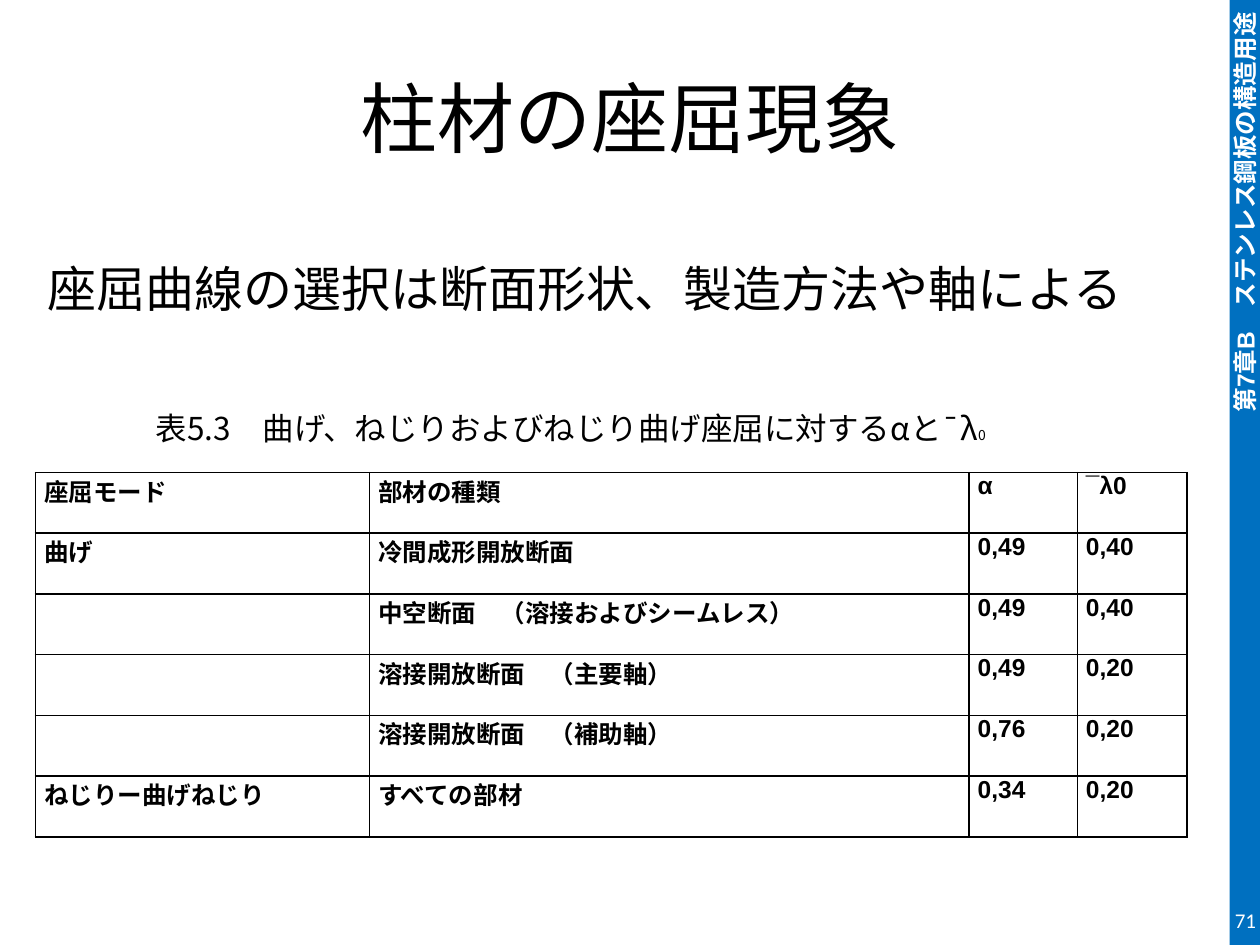
from lxml import etree
from pptx import Presentation
from pptx import util as u
from pptx.dml.color import RGBColor
from pptx.enum import shapes, text
from pptx.oxml import ns

COLOURS = {"bar": "0070C0", "ink": "000000", "paper": "FFFFFF"}
CJK = "Noto Sans CJK JP"
MARGINS = ("margin_left", "margin_top", "margin_right", "margin_bottom")

COLUMN_WIDTHS = (190.8, 342.7, 61.9, 62.6)
ROW_HEIGHT = 34.7
ROWS = (
    ("座屈モード", "部材の種類", "α", "¯λ0"),
    ("曲げ", "冷間成形開放断面", "0,49", "0,40"),
    ("", "中空断面　（溶接およびシームレス）", "0,49", "0,40"),
    ("", "溶接開放断面　（主要軸）", "0,49", "0,20"),
    ("", "溶接開放断面　（補助軸）", "0,76", "0,20"),
    ("ねじりー曲げねじり", "すべての部材", "0,34", "0,20"),
)


def set_values(target, values):
    for name, value in values.items():
        setattr(target, name, value)


def add_run(paragraph, words, size, name=CJK, colour="ink", bold=False):
    run = paragraph.add_run()
    run.text = words
    set_values(run.font, {"size": u.Pt(size), "name": name, "bold": bold})
    run.font.color.rgb = RGBColor.from_string(COLOURS[colour])
    latin = run.font._element.find(ns.qn("a:latin"))
    latin.addnext(etree.Element(ns.qn("a:ea"), typeface=CJK))


def write_frame(shape, runs, align, anchor, margins=(7.2, 3.6, 7.2, 3.6)):
    frame = shape.text_frame
    set_values(frame, {"word_wrap": True, "vertical_anchor": anchor})
    set_values(frame, {name: u.Pt(size) for name, size in zip(MARGINS, margins)})
    paragraph = frame.paragraphs[0]
    paragraph.alignment = align
    for words, values in runs:
        add_run(paragraph, words, **values)
    return frame


def add_chapter_bar(slide):
    bar = slide.shapes.add_shape(
        shapes.MSO_SHAPE.RECTANGLE, u.Pt(702.7), u.Pt(0), u.Pt(17.3), u.Pt(540)
    )
    bar.shadow.inherit = False
    bar.fill.solid()
    bar.fill.fore_color.rgb = RGBColor.from_string(COLOURS["bar"])
    bar.line.fill.background()
    values = {"size": 14, "name": "Arial", "colour": "paper", "bold": True}
    frame = write_frame(bar, [("第7章B　ステンレス鋼板の構造用途", values)],
                        text.PP_ALIGN.RIGHT, text.MSO_ANCHOR.MIDDLE)
    frame._element.find(ns.qn("a:bodyPr")).set("vert", "vert270")


def place_title(slide, words):
    title = slide.shapes.title
    set_values(title, {"left": u.Pt(36), "top": u.Pt(21.6),
                       "width": u.Pt(648), "height": u.Pt(90)})
    write_frame(title, [(words, {"size": 44})],
                text.PP_ALIGN.CENTER, text.MSO_ANCHOR.MIDDLE)


def add_text(slide, box, runs, align=text.PP_ALIGN.LEFT,
             anchor=text.MSO_ANCHOR.TOP, **options):
    shape = slide.shapes.add_textbox(*map(u.Pt, box))
    return write_frame(shape, runs, align, anchor, **options)


def add_borders(cell):
    properties = cell._tc.get_or_add_tcPr()
    for index, side in enumerate(("lnL", "lnR", "lnT", "lnB")):
        line = etree.Element(ns.qn(f"a:{side}"), w=str(u.Pt(1)))
        fill = etree.SubElement(line, ns.qn("a:solidFill"))
        etree.SubElement(fill, ns.qn("a:srgbClr"), val=COLOURS["ink"])
        properties.insert(index, line)


def fill_cell(cell, words):
    cell.fill.background()
    add_borders(cell)
    if words:
        set_values(cell, {name: u.Pt(size) for name, size in zip(MARGINS, (5, 0, 5, 0))})
        paragraph = cell.text_frame.paragraphs[0]
        paragraph.alignment = text.PP_ALIGN.JUSTIFY
        add_run(paragraph, words, 14, "Arial", bold=True)


def add_buckling_table(slide):
    table = slide.shapes.add_table(
        len(ROWS), len(COLUMN_WIDTHS), u.Pt(20.2), u.Pt(270),
        u.Pt(sum(COLUMN_WIDTHS)), u.Pt(ROW_HEIGHT * len(ROWS))
    ).table
    set_values(table, {"first_row": False, "horz_banding": False})
    for column, width in zip(table.columns, COLUMN_WIDTHS):
        column.width = u.Pt(width)
    for row, words in zip(table.rows, ROWS):
        row.height = u.Pt(ROW_HEIGHT)
        for cell, value in zip(row.cells, words):
            fill_cell(cell, value)


def main():
    presentation = Presentation()
    set_values(presentation, {"slide_width": u.Pt(720), "slide_height": u.Pt(540)})
    slide = presentation.slides.add_slide(presentation.slide_layouts[5])
    add_chapter_bar(slide)
    place_title(slide, "柱材の座屈現象")
    add_text(slide, (20.2, 144, 682.5, 51),
             [("座屈曲線の選択は断面形状、製造方法や軸による", {"size": 28})])
    caption = add_text(
        slide, (82, 230.4, 510.5, 51),
        [("表5.3　曲げ、ねじりおよびねじり曲げ座屈に対するαと¯λ", {"size": 18}),
         ("0", {"size": 8})])
    caption.auto_size = text.MSO_AUTO_SIZE.SHAPE_TO_FIT_TEXT
    add_buckling_table(slide)
    add_text(slide, (684, 511.2, 33.8, 28.8),
             [("71", {"size": 12, "name": "Calibri", "colour": "paper"})],
             text.PP_ALIGN.RIGHT, text.MSO_ANCHOR.MIDDLE, margins=(0, 0, 0, 0))
    presentation.save("out.pptx")


if __name__ == "__main__":
    main()
